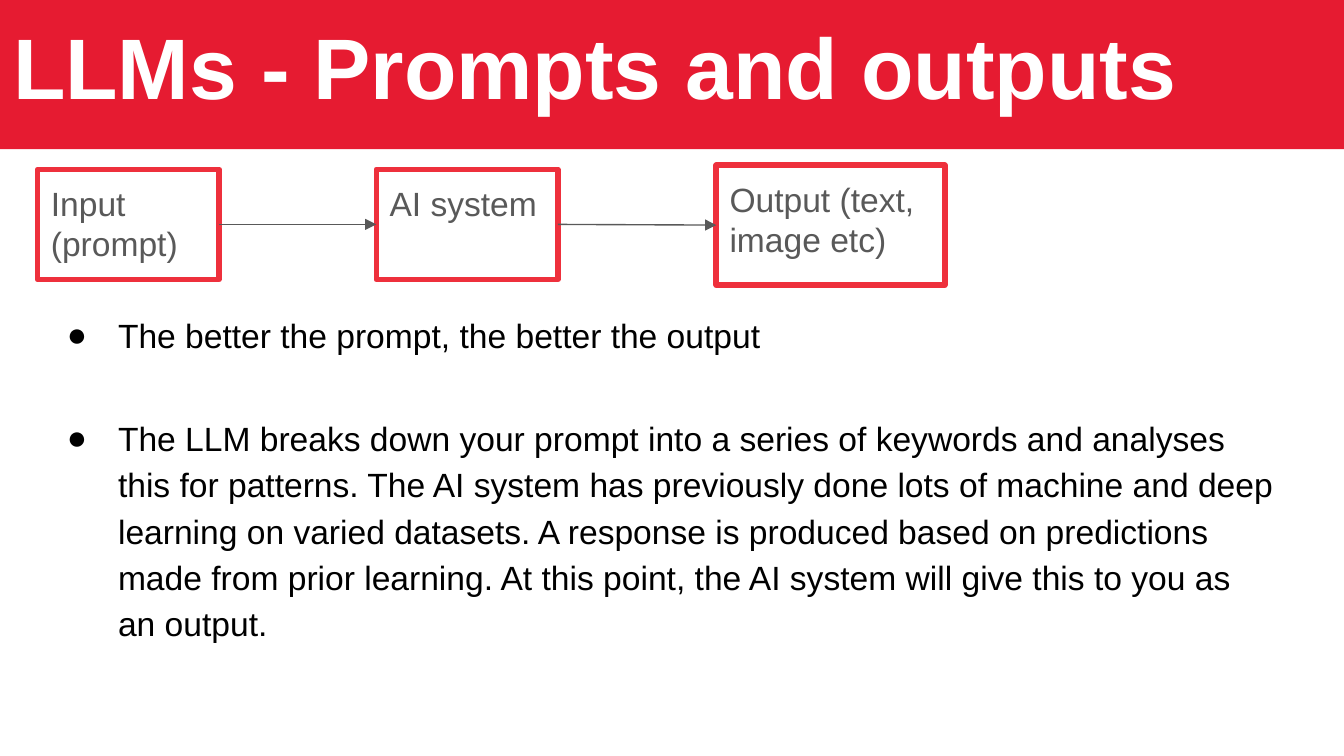
from lxml.etree import SubElement
from pptx import Presentation
from pptx.dml.color import RGBColor
from pptx.enum.shapes import MSO_CONNECTOR, MSO_SHAPE
from pptx.enum.text import MSO_ANCHOR, PP_ALIGN
from pptx.oxml.ns import qn
from pptx.util import Inches, Pt

BANNER_RED = RGBColor(0xE6, 0x1B, 0x31)
BORDER_RED = RGBColor(0xEE, 0x30, 0x3C)
GRAY = RGBColor(0x59, 0x59, 0x59)
WHITE = RGBColor(0xFF, 0xFF, 0xFF)
BLACK = RGBColor(0, 0, 0)


def write_text(shape, paragraphs, size=18, color=GRAY, bold=False):
    frame = shape.text_frame
    frame.word_wrap = True
    frame.vertical_anchor = MSO_ANCHOR.TOP
    frame.margin_left = frame.margin_right = Inches(0.1)
    frame.margin_top = frame.margin_bottom = Inches(0.1)
    frame.text = "\n".join(paragraphs)
    for paragraph in frame.paragraphs:
        paragraph.alignment = PP_ALIGN.LEFT
        font = paragraph.runs[0].font
        font.name = "Arial"
        font.size = Pt(size)
        font.bold = bold
        font.color.rgb = color


presentation = Presentation()
presentation.slide_width = Inches(10)
presentation.slide_height = Inches(10) * 9 // 16
slide = presentation.slides.add_slide(presentation.slide_layouts[6])
shapes = slide.shapes

banner = shapes.add_shape(MSO_SHAPE.RECTANGLE, 0, 0, Inches(10), Inches(1.11))
banner.shadow.inherit = False
banner.fill.solid()
banner.fill.fore_color.rgb = BANNER_RED
banner.line.fill.background()
write_text(banner, ["LLMs - Prompts and outputs"], size=46, color=WHITE, bold=True)

body = shapes.add_textbox(Inches(0.28), Inches(2.24), Inches(9.32), Inches(3.3))
write_text(body, [
    "The better the prompt, the better the output",
    "The LLM breaks down your prompt into a series of keywords and analyses "
    "this for patterns. The AI system has previously done lots of machine and "
    "deep learning on varied datasets. A response is produced based on "
    "predictions made from prior learning. At this point, the AI system will "
    "give this to you as an output.",
], color=BLACK)
for paragraph in body.text_frame.paragraphs:
    properties = paragraph._p.get_or_add_pPr()
    properties.set("marL", str(Inches(0.5)))
    properties.set("indent", str(-Inches(0.38)))
    bullet_color = SubElement(properties, qn("a:buClr"))
    SubElement(bullet_color, qn("a:srgbClr"), val=str(BLACK))
    SubElement(properties, qn("a:buSzPts"), val="1800")
    SubElement(properties, qn("a:buFont"), typeface="Arial")
    SubElement(properties, qn("a:buChar"), char="●")
explanation = body.text_frame.paragraphs[1]
explanation.line_spacing = 1.15
explanation.space_before = Pt(30.5)

stages = [
    (["Input", "(prompt)"], 0.28, 1.26, 1.35, 0.82),
    (["AI system"], 2.8, 1.26, 1.35, 0.82),
    (["Output (text, image etc)"], 5.33, 1.23, 1.7, 0.89),
]
boxes = []
for label, left, top, width, height in stages:
    box = shapes.add_shape(MSO_SHAPE.RECTANGLE, Inches(left), Inches(top), Inches(width), Inches(height))
    box.shadow.inherit = False
    box.fill.background()
    box.line.color.rgb = BORDER_RED
    box.line.width = Pt(3)
    SubElement(box.line._get_or_add_ln(), qn("a:round"))
    write_text(box, label)
    boxes.append(box)

for source, target in zip(boxes, boxes[1:]):
    arrow = shapes.add_connector(MSO_CONNECTOR.STRAIGHT, 0, 0, 0, 0)
    arrow.begin_connect(source, 3)
    arrow.end_connect(target, 1)
    arrow.line.color.rgb = GRAY
    arrow.line.width = Pt(0.75)
    SubElement(arrow.line._get_or_add_ln(), qn("a:tailEnd"), type="triangle", w="med", len="med")
    SubElement(arrow._element.spPr, qn("a:effectLst"))

presentation.save("out.pptx")
